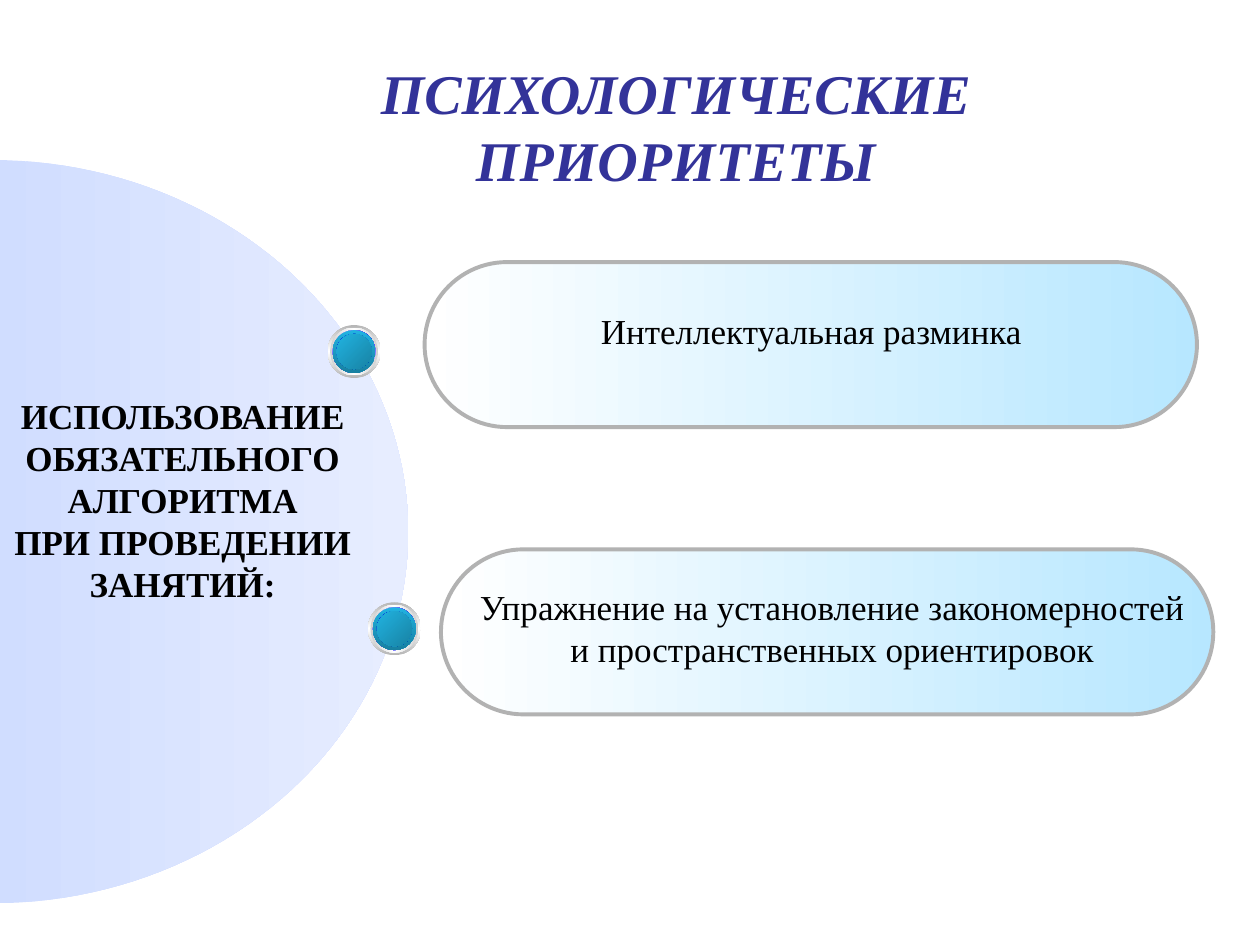
import math
from dataclasses import dataclass

from lxml import etree
from pptx import Presentation
from pptx.dml.color import RGBColor
from pptx.enum.shapes import MSO_SHAPE
from pptx.enum.text import MSO_ANCHOR, PP_ALIGN
from pptx.oxml.ns import qn
from pptx.util import Inches, Pt

OVAL, PILL = MSO_SHAPE.OVAL, MSO_SHAPE.ROUNDED_RECTANGLE
CENTER, LEFT = PP_ALIGN.CENTER, PP_ALIGN.LEFT
MIDDLE, TOP = MSO_ANCHOR.MIDDLE, MSO_ANCHOR.TOP
TITLE_ONLY = 5


@dataclass(frozen=True)
class Theme:
    font: str = "Times New Roman"
    title_size: int = 32
    body_size: int = 20
    title: str = "333399"
    text: str = "000000"
    pill_line: str = "B2B2B2"
    dome: tuple = ("D0DDFF", "E7EDFF")
    pill: tuple = ("FFFFFF", "B7E7FF")
    # Bullet layers from back to front: inset, gradient colours, angle
    bullet: tuple = (
        (0, ("B6B6B6", "FFFFFF", "B6B6B6"), 90),
        (0.02, ("D1D1D1", "FFFFFF", "D1D1D1"), 0),
        (0.04, ("FFFFFF", "0000FF", "FFFFFF"), 45),
        (0.04, ("21B3E1", "1880A1"), 90),
        (0.07, ("0000C3", "0000FF", "0000C3"), 315),
        (0.07, ("21B3E1", "1883A4"), 45),
    )


THEME = Theme()


def fill_gradient(shape, colors, angle=0):
    """Fill with evenly spaced stops; the angle runs clockwise."""
    shape.shadow.inherit = False
    shape.fill.gradient()
    gradient = shape._element.spPr.find(qn("a:gradFill"))
    for child in list(gradient):
        gradient.remove(child)
    stops = etree.SubElement(gradient, qn("a:gsLst"))
    for i, color in enumerate(colors):
        position = str(100000 * i // (len(colors) - 1))
        stop = etree.SubElement(stops, qn("a:gs"), pos=position)
        etree.SubElement(stop, qn("a:srgbClr"), val=color)
    etree.SubElement(gradient, qn("a:lin"), ang=str(angle * 60000), scaled="0")


def write_text(frame, lines, size, color, align, anchor=TOP, bold=False, italic=False):
    frame.word_wrap = True
    frame.vertical_anchor = anchor
    frame.text = "\n".join(lines)
    for paragraph in frame.paragraphs:
        paragraph.alignment = align
        font = paragraph.font
        font.name, font.size = THEME.font, Pt(size)
        font.bold, font.italic = bold, italic
        font.color.rgb = RGBColor.from_string(color)


def add_label(slide, box, lines, align=CENTER, bold=False):
    label = slide.shapes.add_textbox(*map(Inches, box))
    write_text(label.text_frame, lines, THEME.body_size, THEME.text, align, bold=bold)


def add_title(slide, box, heading):
    title = slide.shapes.title
    title.left, title.top, title.width, title.height = map(Inches, box)
    write_text(title.text_frame, [heading], THEME.title_size, THEME.title,
               CENTER, MIDDLE, bold=True, italic=True)


def add_dome(slide, box, steps=90):
    """Half ellipse bulging to the right, flat along the left of its box."""
    left, top, width, height = box
    angles = [math.pi * (i / steps - 0.5) for i in range(steps + 1)]
    arc = [(Inches(left + width * math.cos(a)),
            Inches(top + height / 2 * (1 + math.sin(a)))) for a in angles]
    builder = slide.shapes.build_freeform(*arc[0])
    builder.add_line_segments(arc[1:], close=True)
    dome = builder.convert_to_shape()
    fill_gradient(dome, THEME.dome)
    dome.line.fill.background()


def add_bullet(slide, left, top, size=0.42):
    bullet = slide.shapes.add_group_shape()
    for inset, colors, angle in THEME.bullet:
        side = Inches(size - 2 * inset)
        layer = bullet.shapes.add_shape(
            OVAL, Inches(left + inset), Inches(top + inset), side, side)
        fill_gradient(layer, colors, angle)
        layer.line.fill.background()


def add_topic(slide, box, label_offset, label_size, lines, align):
    """Pill with its label, the label placed from the pill's corner."""
    pill = slide.shapes.add_shape(PILL, *map(Inches, box))
    pill.adjustments[0] = 0.5
    fill_gradient(pill, THEME.pill)
    pill.line.color.rgb = RGBColor.from_string(THEME.pill_line)
    pill.line.width = Pt(2.25)
    left, top = box[0] + label_offset[0], box[1] + label_offset[1]
    add_label(slide, (left, top, *label_size), lines, align)


def main():
    prs = Presentation()
    prs.slide_width, prs.slide_height = Inches(10), Inches(7.5)
    slide = prs.slides.add_slide(prs.slide_layouts[TITLE_ONLY])

    add_title(slide, (2.32, 0.51, 6.09, 0.98), "ПСИХОЛОГИЧЕСКИЕ ПРИОРИТЕТЫ")

    # Left region
    add_dome(slide, (-0.07, 1.27, 3.31, 5.9))

    # Topics, each with its bullet on the edge of the dome
    add_bullet(slide, 2.92, 4.78)
    add_topic(slide, (3.5, 4.36, 6.13, 1.31), (0.04, 0.24), (6.13, 1.08),
              ["Упражнение на установление закономерностей",
               "и пространственных ориентировок"], CENTER)
    add_topic(slide, (3.37, 2.08, 6.13, 1.31), (1.3, 0.33), (5.07, 0.44),
              ["Интеллектуальная разминка"], LEFT)
    add_bullet(slide, 2.6, 2.58)

    # Caption over the dome
    add_label(slide, (-1.77, 3.08, 6.44, 1.78),
              ["ИСПОЛЬЗОВАНИЕ", "ОБЯЗАТЕЛЬНОГО", "АЛГОРИТМА",
               "ПРИ ПРОВЕДЕНИИ", "ЗАНЯТИЙ:"], bold=True)

    prs.save("out.pptx")


if __name__ == "__main__":
    main()
